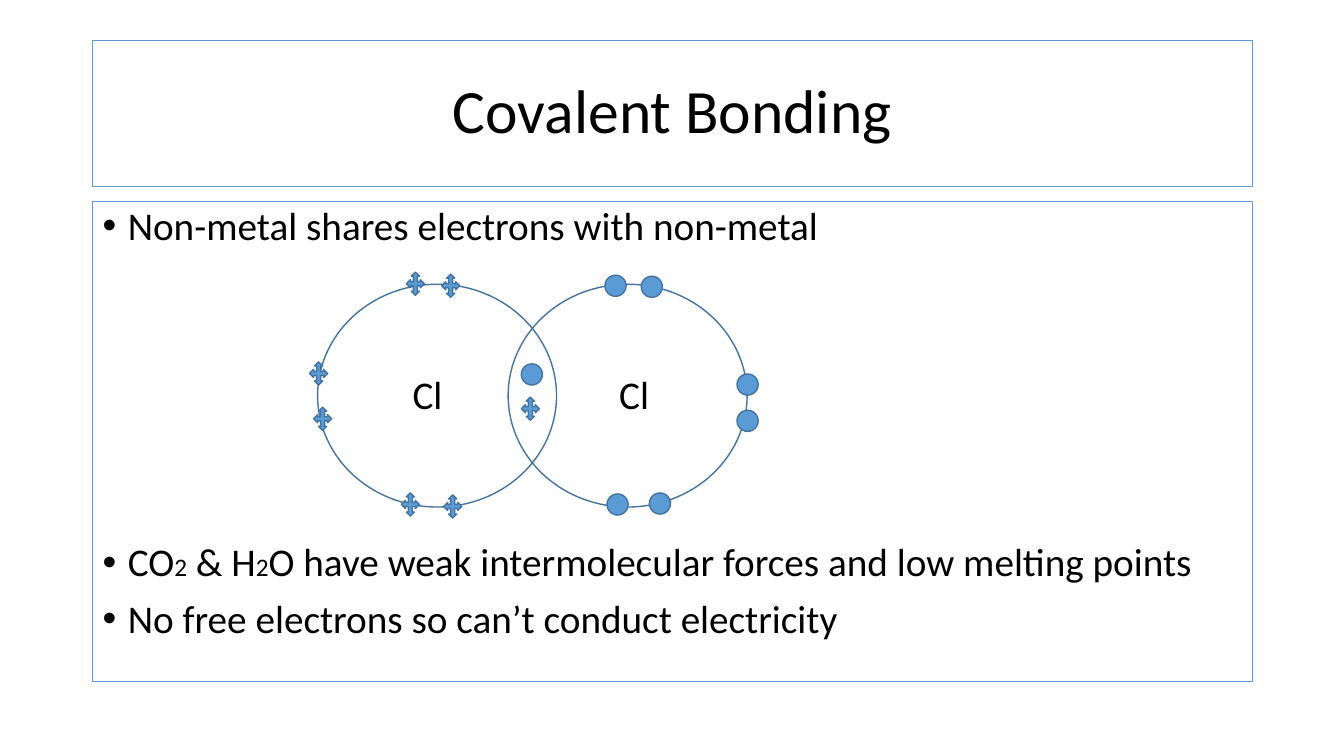
"""Build a slide on covalent bonding with a chlorine molecule diagram."""
from typing import NamedTuple

from lxml import etree
from pptx import Presentation
from pptx.dml.color import RGBColor
from pptx.enum.shapes import MSO_SHAPE
from pptx.enum.text import MSO_ANCHOR, PP_ALIGN
from pptx.oxml.ns import qn
from pptx.util import Inches, Pt

RECT, OVAL, CROSS = MSO_SHAPE.RECTANGLE, MSO_SHAPE.OVAL, MSO_SHAPE.QUAD_ARROW
TOP, MIDDLE = MSO_ANCHOR.TOP, MSO_ANCHOR.MIDDLE
LEFT, CENTER = PP_ALIGN.LEFT, PP_ALIGN.CENTER
BLACK = RGBColor(0x00, 0x00, 0x00)
BLUE = RGBColor(0x5B, 0x9B, 0xD5)
DARK_BLUE = RGBColor(0x43, 0x73, 0x9E)
FONT = "Calibri"
BODY_SIZE, SUB_SIZE = 28, 18
CELL = Inches(0.1)


class Box(NamedTuple):
    """A rectangle in grid columns and rows."""
    col: float
    row: float
    cols: float
    rows: float


class Electrons(NamedTuple):
    """Electrons of one atom: their marker, its size and its centres."""
    marker: int
    cols: float
    rows: float
    centres: tuple


class Bullet(NamedTuple):
    """A bullet line: space before it and its (text, size) runs."""
    before: float
    runs: tuple


TITLE_BOX = Box(9.2, 4, 115, 14.5)
BODY_BOX = Box(9.2, 20, 115, 47.6)
ATOMS = (Box(31.5, 28.2, 23.7, 22.1), Box(50.4, 28.2, 23.7, 22.1))
LABELS = (Box(37.4, 36.4, 10, 6), Box(57.9, 36.4, 10, 6))
ELECTRONS = (
    Electrons(OVAL, 2.1, 2.1, (
        (61.05, 28.35), (64.65, 28.45), (74.15, 38.15), (74.15, 41.75),
        (65.45, 49.95), (61.25, 50.05), (52.75, 37.15))),
    Electrons(CROSS, 1.8, 2.3, (
        (52.6, 40.55), (44.7, 28.35), (41.2, 28.15), (31.6, 37.05),
        (32.0, 41.55), (40.7, 50.05), (44.9, 50.25))),
)
BULLETS = (
    Bullet(0, (("Non-metal shares electrons with non-metal", BODY_SIZE),)),
    Bullet(210, (("CO", BODY_SIZE), ("2", SUB_SIZE), (" & H", BODY_SIZE),
                 ("2", SUB_SIZE),
                 ("O have weak intermolecular forces and low melting points",
                  BODY_SIZE))),
    Bullet(10, (("No free electrons so can’t conduct electricity",
                 BODY_SIZE),)),
)


def place(box: Box) -> list:
    """Turn a grid box into slide lengths."""
    return [round(n * CELL) for n in box]


def add_figure(s, kind, box: Box, line=DARK_BLUE, width=1.0, fill=None):
    """Add an outlined preset shape, filled if a colour is given."""
    sp = s.shapes.add_shape(kind, *place(box))
    sp.shadow.inherit = False
    sp.line.color.rgb = line
    sp.line.width = Pt(width)
    if fill is None:
        sp.fill.background()
    else:
        sp.fill.solid()
        sp.fill.fore_color.rgb = fill
    return sp


def add_run(p, text: str, size=BODY_SIZE, color=BLACK) -> None:
    """Add formatted text to a paragraph."""
    r = p.add_run()
    r.text = text
    r.font.name, r.font.size, r.font.color.rgb = FONT, Pt(size), color


def write(sp, text: str, size=BODY_SIZE, align=CENTER, anchor=MIDDLE) -> None:
    """Write one paragraph into a shape."""
    tf = sp.text_frame
    tf.word_wrap = True
    tf.vertical_anchor = anchor
    p = tf.paragraphs[0]
    p.alignment, p.line_spacing = align, 0.9
    add_run(p, text, size=size)


def set_bullet(p) -> None:
    """Give a paragraph a hanging round bullet."""
    p_pr = p._p.get_or_add_pPr()
    p_pr.set("marL", str(Inches(0.25)))
    p_pr.set("indent", str(-Inches(0.25)))
    etree.SubElement(p_pr, qn("a:buFont"), typeface="Arial")
    etree.SubElement(p_pr, qn("a:buChar"), char="•")


def write_bullets(sp, bullets: tuple) -> None:
    """Write the bullet lines into a shape."""
    tf = sp.text_frame
    tf.word_wrap = True
    tf.vertical_anchor = TOP
    for i, bullet in enumerate(bullets):
        p = tf.add_paragraph() if i else tf.paragraphs[0]
        p.alignment, p.line_spacing = LEFT, 0.9
        p.space_before = Pt(bullet.before)
        set_bullet(p)
        for text, size in bullet.runs:
            add_run(p, text, size=size)


def draw_molecule(s) -> None:
    """Draw the two atoms, their labels and their electrons."""
    for atom in ATOMS:
        add_figure(s, OVAL, atom)
    for label in LABELS:
        write(s.shapes.add_textbox(*place(label)), "Cl")
    for group in ELECTRONS:
        for x, y in group.centres:
            box = Box(x - group.cols / 2, y - group.rows / 2,
                      group.cols, group.rows)
            add_figure(s, group.marker, box, fill=BLUE)


def main() -> None:
    """Build and save the slide."""
    prs = Presentation()
    prs.slide_width, prs.slide_height = Inches(13.33), Inches(7.5)
    s = prs.slides.add_slide(prs.slide_layouts[6])
    title = add_figure(s, RECT, TITLE_BOX, line=BLUE, width=0.75)
    write(title, "Covalent Bonding", size=44)
    body = add_figure(s, RECT, BODY_BOX, line=BLUE, width=0.75)
    write_bullets(body, BULLETS)
    draw_molecule(s)
    prs.save("out.pptx")


if __name__ == "__main__":
    main()
